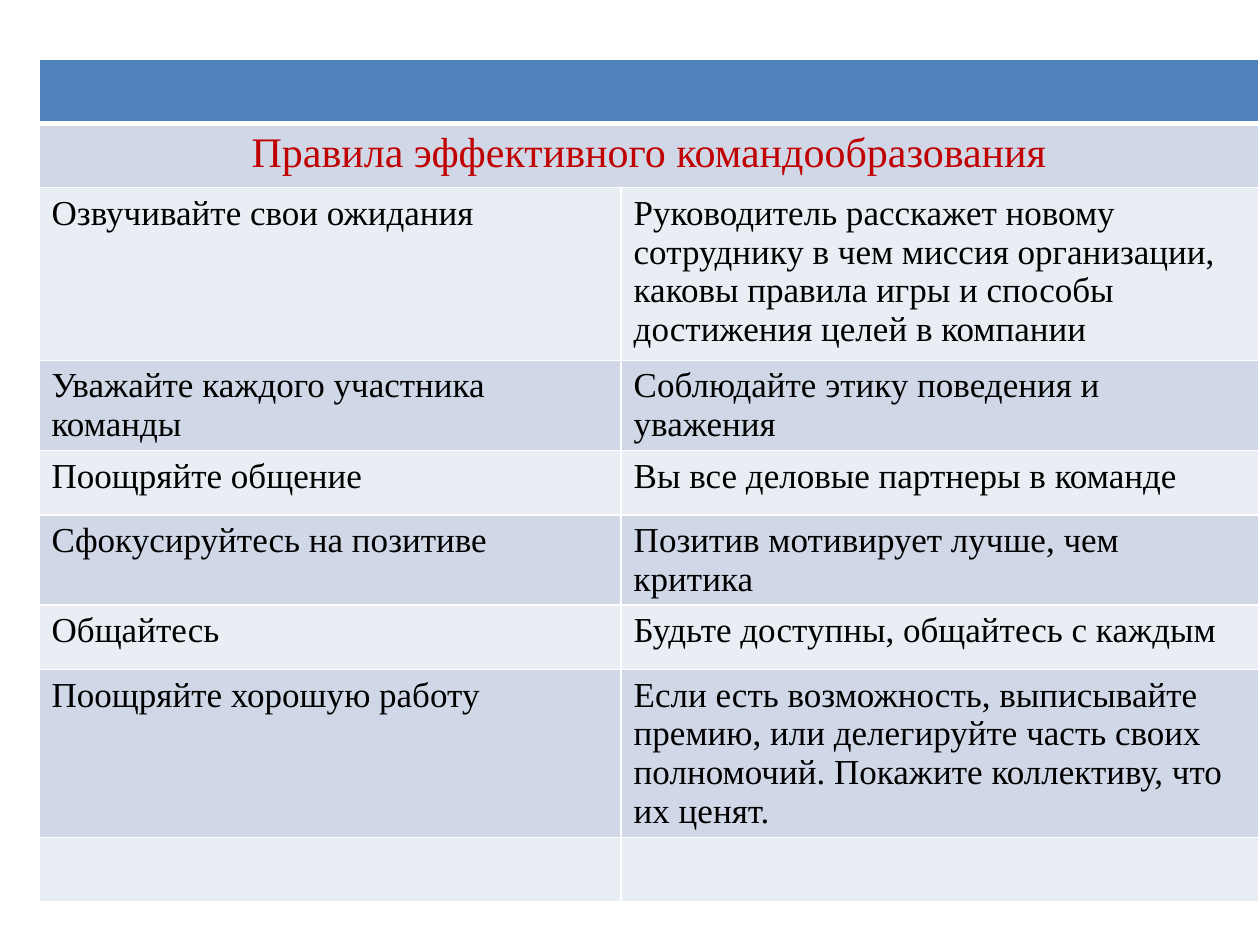
"""Build a slide with a table of team-building rules."""
from dataclasses import dataclass

import pptx
import pptx.dml.color
import pptx.enum.text
import pptx.oxml
import pptx.oxml.ns
import pptx.util
from pptx.util import Inches


@dataclass(frozen=True)
class Theme:
    font: str = "Times New Roman"
    heading_size: int = 24
    body_size: int = 20
    heading: str = "C00000"
    body: str = "000000"
    banner: str = "4F81BD"
    bands: tuple = ("E9EDF4", "D0D8E8")
    border: str = "FFFFFF"
    border_width: int = 1
    banner_rule_width: int = 3


THEME = Theme()
HEADING = "Правила эффективного командообразования"
RULES = [
    ("Озвучивайте свои ожидания",
     "Руководитель расскажет новому сотруднику в чем миссия организации, "
     "каковы правила игры и способы достижения целей в компании"),
    ("Уважайте каждого участника команды", "Соблюдайте этику поведения и уважения"),
    ("Поощряйте общение", "Вы все деловые партнеры в команде"),
    ("Сфокусируйтесь на позитиве", "Позитив мотивирует лучше, чем критика"),
    ("Общайтесь", "Будьте доступны, общайтесь с каждым"),
    ("Поощряйте хорошую работу",
     "Если есть возможность, выписывайте премию, или делегируйте часть своих "
     "полномочий. Покажите коллективу, что их ценят."),
]
ROWS = [("", ""), (HEADING, ""), *RULES, ("", "")]
COLUMN_WIDTHS = (4.62, 5.06)
ROW_HEIGHT = 0.51
FIRST_RULE_HEIGHT = 1.37


def rgb(value):
    return pptx.dml.color.RGBColor.from_string(value)


def set_borders(cell, bottom_width, top_width):
    widths = {"L": THEME.border_width, "R": THEME.border_width,
              "T": top_width, "B": bottom_width}
    properties = cell._tc.get_or_add_tcPr()
    for side, width in widths.items():
        properties.append(pptx.oxml.parse_xml(
            f'<a:ln{side} {pptx.oxml.ns.nsdecls("a")} w="{pptx.util.Pt(width)}">'
            f'<a:solidFill><a:srgbClr val="{THEME.border}"/></a:solidFill>'
            f'</a:ln{side}>'))


def set_fill(cell, color):
    cell.fill.solid()
    cell.fill.fore_color.rgb = rgb(color)


def write_text(cell, text, size, color, alignment=None):
    paragraph = cell.text_frame.paragraphs[0]
    paragraph.alignment = alignment
    run = paragraph.add_run()
    run.text = text
    run.font.name = THEME.font
    run.font.size = pptx.util.Pt(size)
    run.font.color.rgb = rgb(color)


def add_rules_table(slide):
    rules = slide.shapes.add_table(
        len(ROWS), len(COLUMN_WIDTHS), Inches(0.31), Inches(0.47),
        Inches(sum(COLUMN_WIDTHS)), Inches(ROW_HEIGHT * len(ROWS))).table
    for column, width in zip(rules.columns, COLUMN_WIDTHS):
        column.width = Inches(width)
    for row in rules.rows:
        row.height = Inches(ROW_HEIGHT)
    rules.rows[2].height = Inches(FIRST_RULE_HEIGHT)
    for banner_row in range(2):
        rules.cell(banner_row, 0).merge(rules.cell(banner_row, 1))

    for row_index, texts in enumerate(ROWS):
        fill = THEME.bands[row_index % 2] if row_index else THEME.banner
        bottom = THEME.border_width if row_index else THEME.banner_rule_width
        top = THEME.banner_rule_width if row_index == 1 else THEME.border_width
        for column_index, text in enumerate(texts):
            cell = rules.cell(row_index, column_index)
            set_borders(cell, bottom, top)
            set_fill(cell, fill)
            if text == HEADING:
                write_text(cell, text, THEME.heading_size, THEME.heading,
                           pptx.enum.text.PP_ALIGN.CENTER)
            elif text:
                write_text(cell, text, THEME.body_size, THEME.body)


def main():
    presentation = pptx.Presentation()
    presentation.slide_width = Inches(10)
    presentation.slide_height = Inches(7.5)
    slide = presentation.slides.add_slide(presentation.slide_layouts[6])
    add_rules_table(slide)
    presentation.save("out.pptx")


if __name__ == "__main__":
    main()
